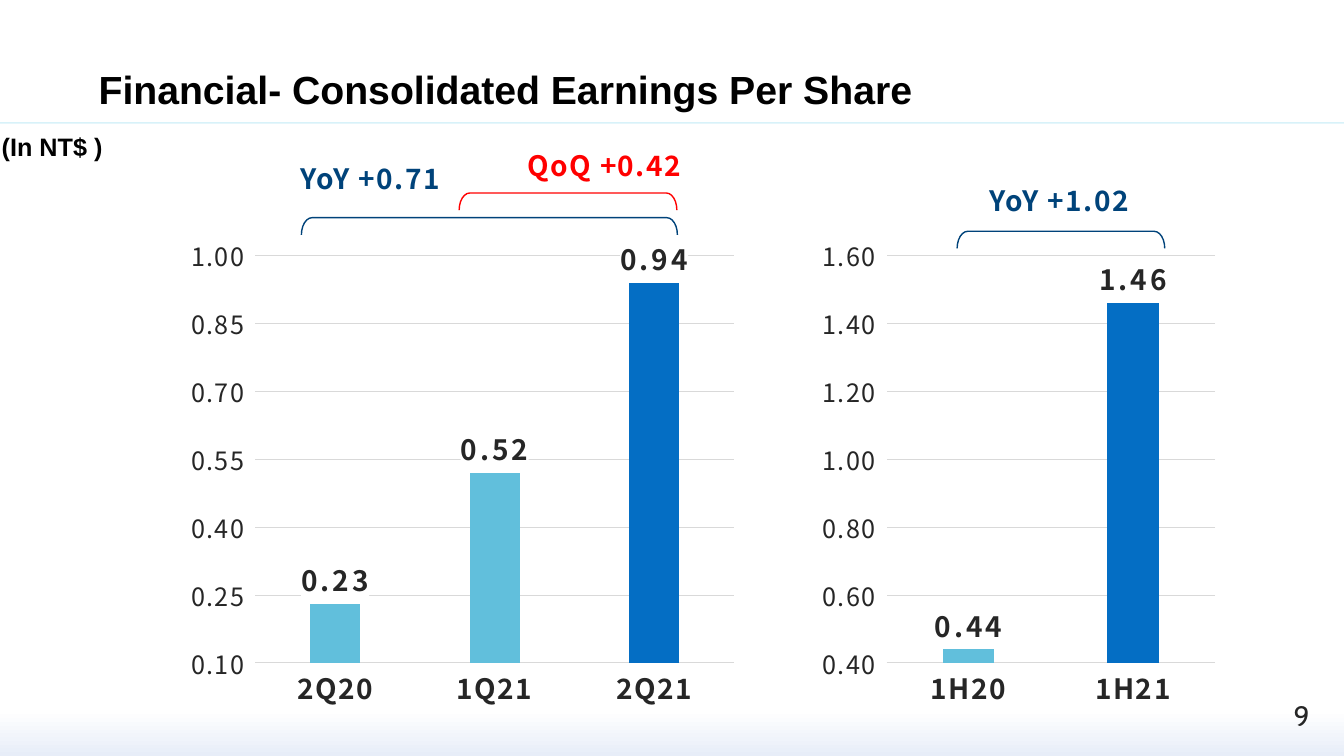
from dataclasses import dataclass

from lxml.etree import SubElement
from pptx import Presentation
from pptx.chart.chart import Chart
from pptx.chart.data import CategoryChartData
from pptx.dml.color import RGBColor
from pptx.enum.chart import XL_CHART_TYPE, XL_LABEL_POSITION, XL_TICK_MARK
from pptx.enum.shapes import MSO_CONNECTOR, MSO_SHAPE
from pptx.enum.text import MSO_ANCHOR, MSO_AUTO_SIZE, PP_ALIGN
from pptx.oxml import parse_xml
from pptx.oxml.ns import nsdecls, qn
from pptx.oxml.xmlchemy import BaseOxmlElement
from pptx.slide import Slide
from pptx.text.text import Font
from pptx.util import Pt


@dataclass(frozen=True)
class Theme:
    """Colours, fonts and type sizes of the slide."""

    heading_font: str = "Arial"
    chart_font: str = "Noto Sans CJK SC"
    number_font: str = "Cabin"
    black: str = "000000"
    ink: str = "262626"
    navy: str = "00437A"
    red: str = "FF0000"
    light_bar: str = "61BFDC"
    dark_bar: str = "046EC4"
    grid: str = "D9D9D9"
    rule: str = "74D1EA"
    glow: str = "E7EDF8"
    white: str = "FFFFFF"
    title_size: float = 28
    label_size: float = 20
    axis_size: float = 18


@dataclass(frozen=True)
class EarningsChart:
    """One column chart whose last column is highlighted."""

    left: float
    width: float
    plot_width: float
    periods: tuple[str, ...]
    values: tuple[float, ...]
    minimum: float
    maximum: float
    step: float


@dataclass(frozen=True)
class Caption:
    """One line of text in a box."""

    text: str
    left: float
    top: float
    width: float
    height: float
    size: float
    font: str
    colour: str
    bold: bool = True
    align: PP_ALIGN = PP_ALIGN.LEFT
    anchor: MSO_ANCHOR = MSO_ANCHOR.TOP
    spacing: int = 0


@dataclass(frozen=True)
class Growth:
    """A bracket over two columns and the change it marks."""

    text: str
    colour: str
    centre_x: float
    centre_y: float
    span: float
    text_left: float
    text_top: float
    text_width: float


THEME = Theme()
CHART_TOP, CHART_HEIGHT = 165.6, 343.4
BRACKET_DEPTH = 12.24
CHARTS = (
    EarningsChart(517, 418.3, 0.561, ("1H20", "1H21"), (0.44, 1.46), 0.4, 1.6, 0.2),
    EarningsChart(35.3, 529.2, 0.646, ("2Q20", "1Q21", "2Q21"), (0.23, 0.52, 0.94), 0.1, 1, 0.15),
)
GROWTHS = (
    Growth("YoY +0.71", THEME.navy, 349.56, 161.64, 268.56, 76.3, 111.6, 375.8),
    Growth("QoQ +0.42", THEME.red, 405.72, 144, 155.52, 300.2, 102.2, 262.8),
    Growth("YoY +1.02", THEME.navy, 757.8, 171.36, 148.32, 636.5, 127.4, 239.8),
)
CAPTIONS = (
    Caption("9", 726.5, 496.8, 216, 28.8, THEME.label_size, THEME.number_font, THEME.ink,
            False, PP_ALIGN.RIGHT, MSO_ANCHOR.MIDDLE),
    Caption("Financial- Consolidated Earnings Per Share", 63.4, 43.2, 686.9, 41,
            THEME.title_size, THEME.heading_font, THEME.black),
    Caption("(In NT$ )", -5.8, 90, 367.2, 28.8, THEME.axis_size, THEME.heading_font,
            THEME.black, anchor=MSO_ANCHOR.MIDDLE),
)


def rgb(colour: str) -> RGBColor:
    """Turn a hex string into a colour."""
    return RGBColor.from_string(colour)


def style_font(font: Font, name: str, size: float, colour: str, bold: bool) -> None:
    """Set typeface, size, colour and weight."""
    font.name, font.size, font.bold = name, Pt(size), bold
    font.color.rgb = rgb(colour)


def set_opacity(element: BaseOxmlElement, percent: int) -> None:
    """Make the first colour inside an element translucent."""
    colour = next(element.iter(qn("a:srgbClr")))
    SubElement(colour, qn("a:alpha")).set("val", str(percent * 1000))


def paint_background(slide: Slide) -> None:
    """Fade a pale blue up from the bottom edge."""
    fill = slide.background.fill
    fill.gradient()
    fill.gradient_angle = 90
    stops = zip(fill.gradient_stops, ((0, THEME.glow), (0.06, THEME.white)))
    for stop, (position, colour) in stops:
        stop.position = position
        stop.color.rgb = rgb(colour)
    set_opacity(slide.element, 92)


def refine_chart(chart: Chart, plot_width: float) -> None:
    """Fix the plot area, letter spacing and white label backing."""
    plot_area = next(chart.element.iter(qn("c:plotArea")))
    for layout in plot_area.findall(qn("c:layout")):
        plot_area.remove(layout)
    places = (("x", 0.278), ("y", 0.049), ("w", plot_width), ("h", 0.848))
    sizes = "".join(f'<c:{key} val="{value}"/>' for key, value in places)
    plot_area.insert(0, parse_xml(
        f'<c:layout {nsdecls("c")}><c:manualLayout><c:layoutTarget val="inner"/>'
        f'<c:xMode val="edge"/><c:yMode val="edge"/>{sizes}</c:manualLayout></c:layout>'))
    for tag, spacing in (("c:catAx", 100), ("c:valAx", 100), ("c:dLbls", 200)):
        for properties in next(plot_area.iter(qn(tag))).iter(qn("a:defRPr")):
            properties.set("spc", str(spacing))
    labels = next(plot_area.iter(qn("c:dLbls")))
    labels.find(qn("c:txPr")).addprevious(parse_xml(
        f'<c:spPr {nsdecls("c", "a")}><a:solidFill><a:srgbClr val="{THEME.white}"/>'
        '</a:solidFill></c:spPr>'))


def draw_chart(slide: Slide, earnings: EarningsChart) -> None:
    """Draw one earnings column chart."""
    data = CategoryChartData(number_format="0.00")
    data.categories = earnings.periods
    data.add_series("Series 1", earnings.values)
    chart = slide.shapes.add_chart(
        XL_CHART_TYPE.COLUMN_CLUSTERED, Pt(earnings.left), Pt(CHART_TOP),
        Pt(earnings.width), Pt(CHART_HEIGHT), data).chart
    chart.has_legend = chart.has_title = False
    style_font(chart.font, THEME.chart_font, THEME.axis_size, THEME.ink, False)
    periods, amounts = chart.category_axis, chart.value_axis
    for axis, size, bold in ((periods, THEME.label_size, True), (amounts, THEME.axis_size, False)):
        axis.major_tick_mark = axis.minor_tick_mark = XL_TICK_MARK.NONE
        style_font(axis.tick_labels.font, THEME.chart_font, size, THEME.ink, bold)
    amounts.minimum_scale, amounts.maximum_scale = earnings.minimum, earnings.maximum
    amounts.major_unit = earnings.step
    amounts.tick_labels.number_format = r"#,##0.00_);[Red]\(#,##0.00\)"
    amounts.tick_labels.number_format_is_linked = False
    amounts.format.line.fill.background()
    for line in (periods.format.line, amounts.major_gridlines.format.line):
        line.color.rgb = rgb(THEME.grid)
        line.width = Pt(0.75)
    plot = chart.plots[0]
    plot.gap_width, plot.overlap, plot.vary_by_categories = 219, -27, False
    series = plot.series[0]
    latest = series.points[len(earnings.values) - 1]
    for target, colour in ((series, THEME.light_bar), (latest, THEME.dark_bar)):
        target.format.fill.solid()
        target.format.fill.fore_color.rgb = rgb(colour)
    labels = series.data_labels
    labels.show_value = True
    labels.position = XL_LABEL_POSITION.OUTSIDE_END
    labels.number_format, labels.number_format_is_linked = "0.00", False
    style_font(labels.font, THEME.chart_font, THEME.label_size, THEME.ink, True)
    refine_chart(chart, earnings.plot_width)


def draw_caption(slide: Slide, caption: Caption) -> None:
    """Draw one line of text."""
    shape = slide.shapes.add_textbox(
        Pt(caption.left), Pt(caption.top), Pt(caption.width), Pt(caption.height))
    frame = shape.text_frame
    frame.word_wrap, frame.vertical_anchor = True, caption.anchor
    frame.auto_size = MSO_AUTO_SIZE.SHAPE_TO_FIT_TEXT
    paragraph = frame.paragraphs[0]
    paragraph.alignment = caption.align
    run = paragraph.add_run()
    run.text = caption.text
    style_font(run.font, caption.font, caption.size, caption.colour, caption.bold)
    if caption.spacing:
        next(shape.element.iter(qn("a:rPr"))).set("spc", str(caption.spacing))


def draw_growth(slide: Slide, growth: Growth) -> None:
    """Draw a bracket that opens downwards and its caption."""
    shape = slide.shapes.add_shape(
        MSO_SHAPE.LEFT_BRACKET, Pt(growth.centre_x - BRACKET_DEPTH / 2),
        Pt(growth.centre_y - growth.span / 2), Pt(BRACKET_DEPTH), Pt(growth.span))
    shape.rotation, shape.adjustments[0] = 90, 0.619
    shape.shadow.inherit = False
    shape.fill.background()
    shape.line.color.rgb, shape.line.width = rgb(growth.colour), Pt(1)
    draw_caption(slide, Caption(
        growth.text, growth.text_left, growth.text_top, growth.text_width, 31.7,
        THEME.label_size, THEME.chart_font, growth.colour, align=PP_ALIGN.CENTER, spacing=100))


def draw_rule(slide: Slide, width: float, top: float) -> None:
    """Draw the pale line under the title."""
    rule = slide.shapes.add_connector(MSO_CONNECTOR.STRAIGHT, Pt(width), Pt(top), Pt(0), Pt(top))
    rule.line.color.rgb, rule.line.width = rgb(THEME.rule), Pt(1)
    set_opacity(rule.element, 28)
    SubElement(rule.element.spPr, qn("a:effectLst"))


def main() -> None:
    """Build the earnings per share slide."""
    presentation = Presentation()
    presentation.slide_width, presentation.slide_height = Pt(960), Pt(540)
    slide = presentation.slides.add_slide(presentation.slide_layouts[6])
    paint_background(slide)
    for earnings in CHARTS:
        draw_chart(slide, earnings)
    for growth in GROWTHS:
        draw_growth(slide, growth)
    draw_rule(slide, 960, 87.84)
    for caption in CAPTIONS:
        draw_caption(slide, caption)
    presentation.save("out.pptx")


if __name__ == "__main__":
    main()
